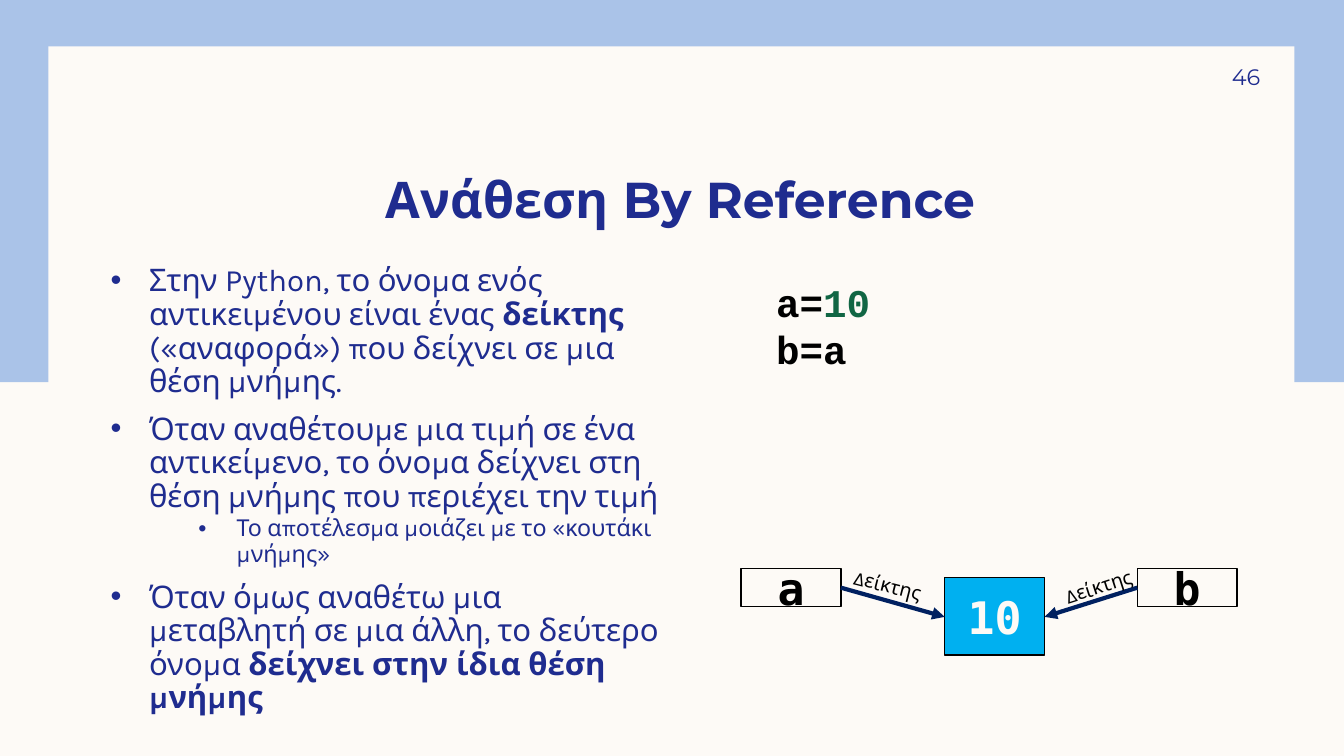
"""Build the slide on assignment by reference."""
from lxml import etree
from pptx import Presentation
from pptx import util as u
from pptx.dml.color import RGBColor
from pptx.enum import shapes, text
from pptx.oxml import ns

NAVY, CREAM, BLACK = "1F2C8F", "FDFAF6", "000000"
ALIGN = text.PP_ALIGN
ANCHOR = text.MSO_ANCHOR


def color(value):
    """Turn a hex string into a colour."""
    return RGBColor.from_string(value)


def write(shape, paragraphs, font, align=ALIGN.LEFT, anchor=ANCHOR.TOP,
          margins=(0.1, 0.05, 0.1, 0.05), wrap=True):
    """Fill a shape with paragraphs, each a list of (text, font changes)."""
    frame = shape.text_frame
    frame.word_wrap = wrap
    frame.vertical_anchor = anchor
    for side, margin in zip(("left", "top", "right", "bottom"), margins):
        setattr(frame, f"margin_{side}", u.Inches(margin))
    for index, runs in enumerate(paragraphs):
        paragraph = frame.add_paragraph() if index else frame.paragraphs[0]
        paragraph.alignment = align
        for content, changes in runs:
            run = paragraph.add_run()
            run.text = content
            values = {**font, **changes}
            run.font.color.rgb = color(values.pop("color"))
            for name, value in values.items():
                setattr(run.font, name, value)
    return frame


presentation = Presentation()
presentation.slide_width = u.Inches(13.33)
presentation.slide_height = u.Inches(7.5)
slide = presentation.slides.add_slide(presentation.slide_layouts[6])
slide.background.fill.solid()
slide.background.fill.fore_color.rgb = color(CREAM)

for box, fill in (((-0.03, 0, 13.36, 3.79), "AAC3E8"),
                  ((0.48, 0.46, 12.36, 6.59), CREAM)):
    panel = slide.shapes.add_shape(shapes.MSO_SHAPE.RECTANGLE, *map(u.Inches, box))
    panel.shadow.inherit = False
    panel.fill.solid()
    panel.fill.fore_color.rgb = color(fill)
    panel.line.fill.background()

title = slide.shapes.add_textbox(*map(u.Inches, (1, 1.16, 11.5, 1.11)))
write(title, [[("Ανάθεση By Reference", {})]],
      {"name": "Montserrat", "size": u.Pt(36), "bold": True, "color": NAVY},
      ALIGN.CENTER, ANCHOR.BOTTOM, (0.1, 0, 0.1, 0))

number = slide.shapes.add_textbox(*map(u.Inches, (11.33, 0.5, 1.17, 0.52)))
write(number, [[("46", {})]], {"name": "Montserrat", "size": u.Pt(16), "color": NAVY},
      ALIGN.RIGHT, ANCHOR.MIDDLE, (0.1, 0.05, 0, 0.05))

bold = {"bold": True}
bullets = [
    [("Στην Python, το όνομα ενός αντικειμένου είναι ένας ", {}), ("δείκτης", bold),
     (" («αναφορά») που δείχνει σε μια θέση μνήμης.", {})],
    [("Όταν αναθέτουμε μια τιμή σε ένα αντικείμενο, το όνομα δείχνει στη "
      "θέση μνήμης που περιέχει την τιμή", {})],
    [("Το αποτέλεσμα μοιάζει με το «κουτάκι μνήμης»", {"size": u.Pt(16.6)})],
    [("Όταν όμως αναθέτω μια μεταβλητή σε μια άλλη, το δεύτερο όνομα ", {}),
     ("δείχνει στην ίδια θέση μνήμης", bold)],
]
body = slide.shapes.add_textbox(*map(u.Inches, (1, 2.53, 5.67, 4.54)))
frame = write(body, bullets, {"name": "Karla", "size": u.Pt(22.2), "color": NAVY},
              margins=(0.1,) * 4)
for paragraph, level in zip(frame.paragraphs, (0, 0, 2, 0)):
    paragraph.level = level
    paragraph.line_spacing = 0.9
    paragraph.space_before = u.Pt(2 if level else 10)
    properties = paragraph._p.get_or_add_pPr()
    properties.set("marL", str(u.Inches(1.25 if level else 0.38)))
    properties.set("indent", str(u.Inches(-0.38)))
    etree.SubElement(properties, ns.qn("a:buFont"), typeface="Arial")
    etree.SubElement(properties, ns.qn("a:buChar"), char="•")

code = slide.shapes.add_textbox(*map(u.Inches, (7.6, 2.71, 1.13, 1.04)))
write(code, [[("a=", {}), ("10", {"color": "116644"})], [("b=a", {})]],
      {"name": "Courier New", "size": u.Pt(28), "bold": True, "color": BLACK}, wrap=False)

for content, box, fill, ink in (("10", (9.37, 5.73, 0.99, 0.77), "00B0F0", CREAM),
                                ("a", (7.35, 5.64, 0.99, 0.38), None, BLACK),
                                ("b", (11.28, 5.64, 0.99, 0.38), None, BLACK)):
    cell = slide.shapes.add_shape(shapes.MSO_SHAPE.RECTANGLE, *map(u.Inches, box))
    cell.shadow.inherit = False
    if fill:
        cell.fill.solid()
        cell.fill.fore_color.rgb = color(fill)
    else:
        cell.fill.background()
    cell.line.color.rgb = color(BLACK)
    cell.line.width = u.Pt(1)
    write(cell, [[(content, {})]],
          {"name": "DejaVu Sans Mono", "size": u.Pt(32), "bold": True, "color": ink},
          ALIGN.CENTER, ANCHOR.MIDDLE)

for start, end, label_left, label_top, angle in ((8.34, 9.37, 8.23, 5.64, 14.3),
                                                 (11.28, 10.36, 10.32, 5.65, 342.1)):
    pointer = slide.shapes.add_connector(
        shapes.MSO_CONNECTOR.STRAIGHT, *map(u.Inches, (start, 5.83, end, 6.12)))
    pointer.line.color.rgb = color("002060")
    pointer.line.width = u.Pt(3)
    etree.SubElement(pointer.line._get_or_add_ln(), ns.qn("a:tailEnd"), type="triangle")
    etree.SubElement(pointer._element.spPr, ns.qn("a:effectLst"))
    label = slide.shapes.add_textbox(*map(u.Inches, (label_left, label_top, 1.15, 0.34)))
    label.rotation = angle
    write(label, [[("Δείκτης", {})]],
          {"name": "Karla", "size": u.Pt(14), "color": BLACK}, ALIGN.CENTER)

presentation.save("out.pptx")
